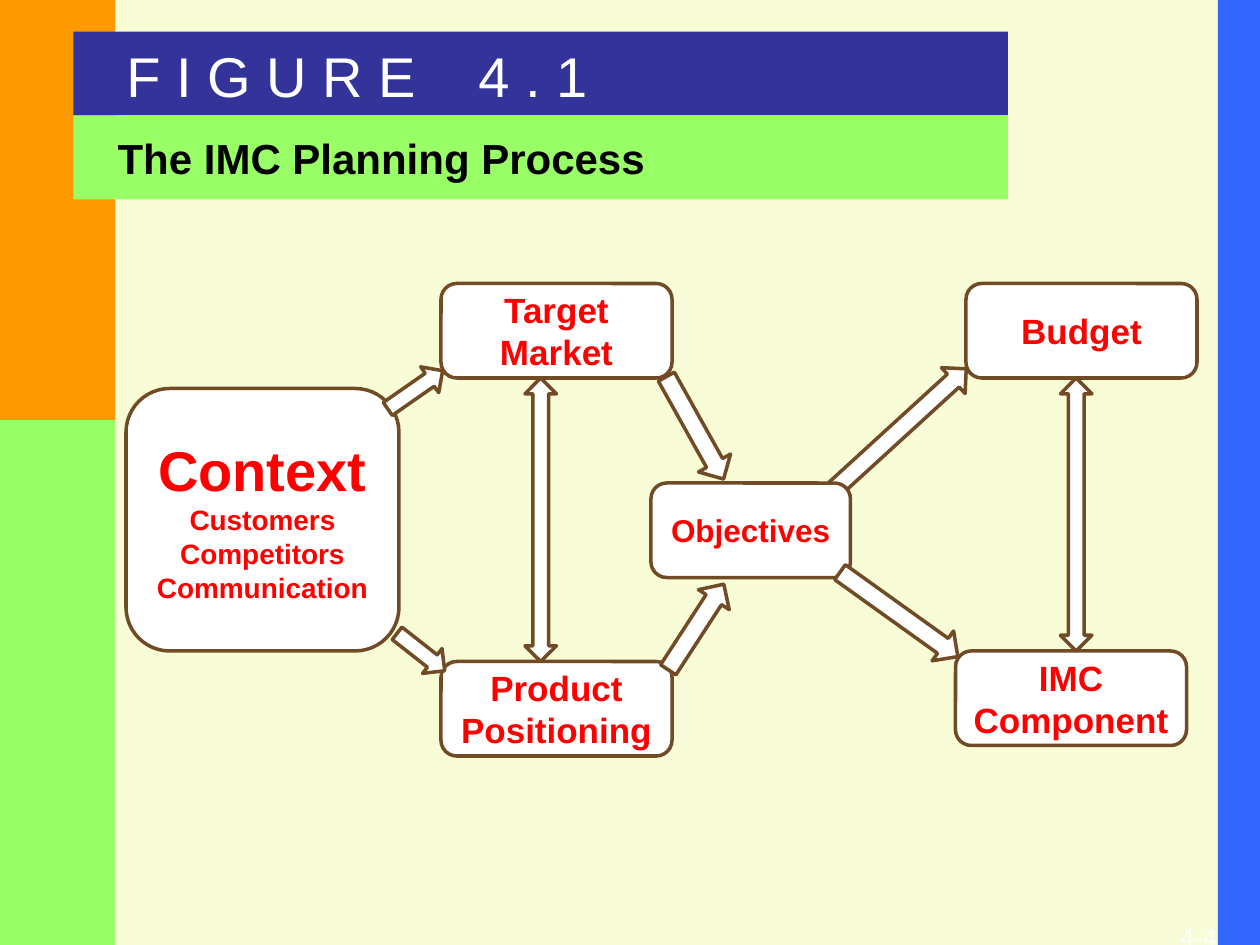
from dataclasses import dataclass

from pptx import Presentation
from pptx.dml.color import RGBColor
from pptx.enum.shapes import MSO_SHAPE as Preset
from pptx.enum.text import MSO_ANCHOR as Anchor, MSO_AUTO_SIZE as AutoSize, PP_ALIGN as Align
from pptx.util import Pt

BLUE, ORANGE, GREEN, NAVY = "3366FF", "FF9900", "99FF66", "333399"
CREAM, WHITE, BLACK, RED, BROWN = "F9FDD7", "FFFFFF", "000000", "FF0000", "714B26"


@dataclass(frozen=True)
class Band:
    left: float
    top: float
    width: float
    height: float
    colour: str


@dataclass(frozen=True)
class Step:
    """A rounded box of the process; sizes holds one text size per line."""
    text: str
    left: float
    top: float
    sizes: tuple = (20, 20)
    width: float = 132
    height: float = 54


@dataclass(frozen=True)
class Arrow:
    left: float
    top: float
    length: float
    thickness: float
    angle: float
    preset: Preset = Preset.RIGHT_ARROW


BANDS = [
    Band(696, 0, 24, 540, BLUE),
    Band(0, 0, 66, 240, ORANGE),
    Band(0, 240, 66, 300, GREEN),
    Band(42, 18, 534, 48, NAVY),
    Band(42, 66, 534, 48, GREEN),
]
# Drawn from back to front: some arrows run under a box, others over it.
DIAGRAM = [
    Step("Context\nCustomers\nCompetitors\nCommunication", 72, 222, (32, 16, 16, 16), 156, 150),
    Step("Budget", 552, 162),
    Step("Target\nMarket", 252, 162),
    Step("Product\nPositioning", 252, 378),
    Step("IMC\nComponent", 546, 372),
    Arrow(368.6, 347.8, 58.3, 21, 303),
    Arrow(460.8, 236.2, 105.1, 20, 317.6),
    Arrow(223.2, 363.6, 34.6, 18, 38.1),
    Arrow(218.2, 213.8, 38.2, 18, 325.1),
    Step("Objectives", 372, 276, (18,), 114),
    Arrow(363.6, 234, 67, 21, 60.8),
    Arrow(472.3, 340.6, 82.8, 21, 35.6),
    Arrow(228, 288, 162, 18, 270, Preset.LEFT_RIGHT_ARROW),
    Arrow(537, 285, 156, 18, 270, Preset.LEFT_RIGHT_ARROW),
]


def rgb(colour: str) -> RGBColor:
    return RGBColor.from_string(colour)


def write(frame, text: str, *, sizes: tuple, colour: str, bold=False,
          align=Align.CENTER, anchor=Anchor.MIDDLE, wrap=False, inset=None):
    """Fill a text frame, one paragraph per line of text."""
    frame.text = text
    frame.auto_size = AutoSize.NONE
    frame.word_wrap = wrap
    frame.vertical_anchor = anchor
    if inset is not None:
        frame.margin_left = frame.margin_right = Pt(inset)
        frame.margin_top = frame.margin_bottom = Pt(inset)
    for paragraph, size in zip(frame.paragraphs, sizes):
        paragraph.alignment = align
        for run in paragraph.runs:
            font = run.font
            font.name, font.size, font.bold = "Arial", Pt(size), bold
            font.color.rgb = rgb(colour)


def add_preset(shapes, preset, left, top, width, height, fill, line=None):
    shape = shapes.add_shape(preset, Pt(left), Pt(top), Pt(width), Pt(height))
    shape.shadow.inherit = False
    shape.fill.solid()
    shape.fill.fore_color.rgb = rgb(fill)
    if line:
        shape.line.color.rgb = rgb(line)
        shape.line.width = Pt(2)
    else:
        shape.line.fill.background()
    return shape


def draw_band(shapes, band: Band):
    add_preset(shapes, Preset.RECTANGLE, band.left, band.top, band.width, band.height, band.colour)


def draw_step(shapes, step: Step):
    box = add_preset(shapes, Preset.ROUNDED_RECTANGLE, step.left, step.top,
                     step.width, step.height, WHITE, BROWN)
    write(box.text_frame, step.text, sizes=step.sizes, colour=RED, bold=True)


def draw_arrow(shapes, arrow: Arrow):
    shape = add_preset(shapes, arrow.preset, arrow.left, arrow.top,
                       arrow.length, arrow.thickness, WHITE, BROWN)
    shape.rotation = arrow.angle


def draw_figure_number(shapes):
    box = shapes.add_textbox(Pt(54), Pt(20), Pt(300), Pt(45))
    frame = box.text_frame
    frame.text = "F I G U R E"
    gap = frame.paragraphs[0].add_run()
    gap.text = " "
    frame.paragraphs[0].add_run().text = "4 . 1"
    label = frame.paragraphs[0].runs
    for run in label:
        run.font.name, run.font.size = "Arial", Pt(32)
        run.font.color.rgb = rgb(WHITE)
    # Letter spacing, in hundredths of a point, widens the gap before the number.
    gap.font._element.set("spc", "2670")
    frame.word_wrap = True
    frame.paragraphs[0].alignment = Align.CENTER


def draw_title(shapes):
    title = shapes.title
    title.left, title.top, title.width, title.height = Pt(60), Pt(72), Pt(504), Pt(36)
    write(title.text_frame, "The IMC Planning Process", sizes=(24,), colour=BLACK,
          bold=True, align=Align.LEFT, wrap=True)
    shapes.element.append(title.element)  # in front of the bands


def draw_page_number(shapes):
    box = shapes.add_textbox(Pt(660), Pt(527), Pt(35), Pt(13))
    write(box.text_frame, "4-4", sizes=(14,), colour=WHITE, align=Align.RIGHT,
          anchor=Anchor.TOP, wrap=True, inset=0)


def main():
    deck = Presentation()
    deck.slide_width, deck.slide_height = Pt(720), Pt(540)
    slide = deck.slides.add_slide(deck.slide_layouts[5])
    slide.background.fill.solid()
    slide.background.fill.fore_color.rgb = rgb(CREAM)
    shapes = slide.shapes

    for band in BANDS:
        draw_band(shapes, band)
    draw_page_number(shapes)
    draw_figure_number(shapes)
    draw_title(shapes)
    for part in DIAGRAM:
        draw = draw_step if isinstance(part, Step) else draw_arrow
        draw(shapes, part)
    deck.save("out.pptx")


if __name__ == "__main__":
    main()
